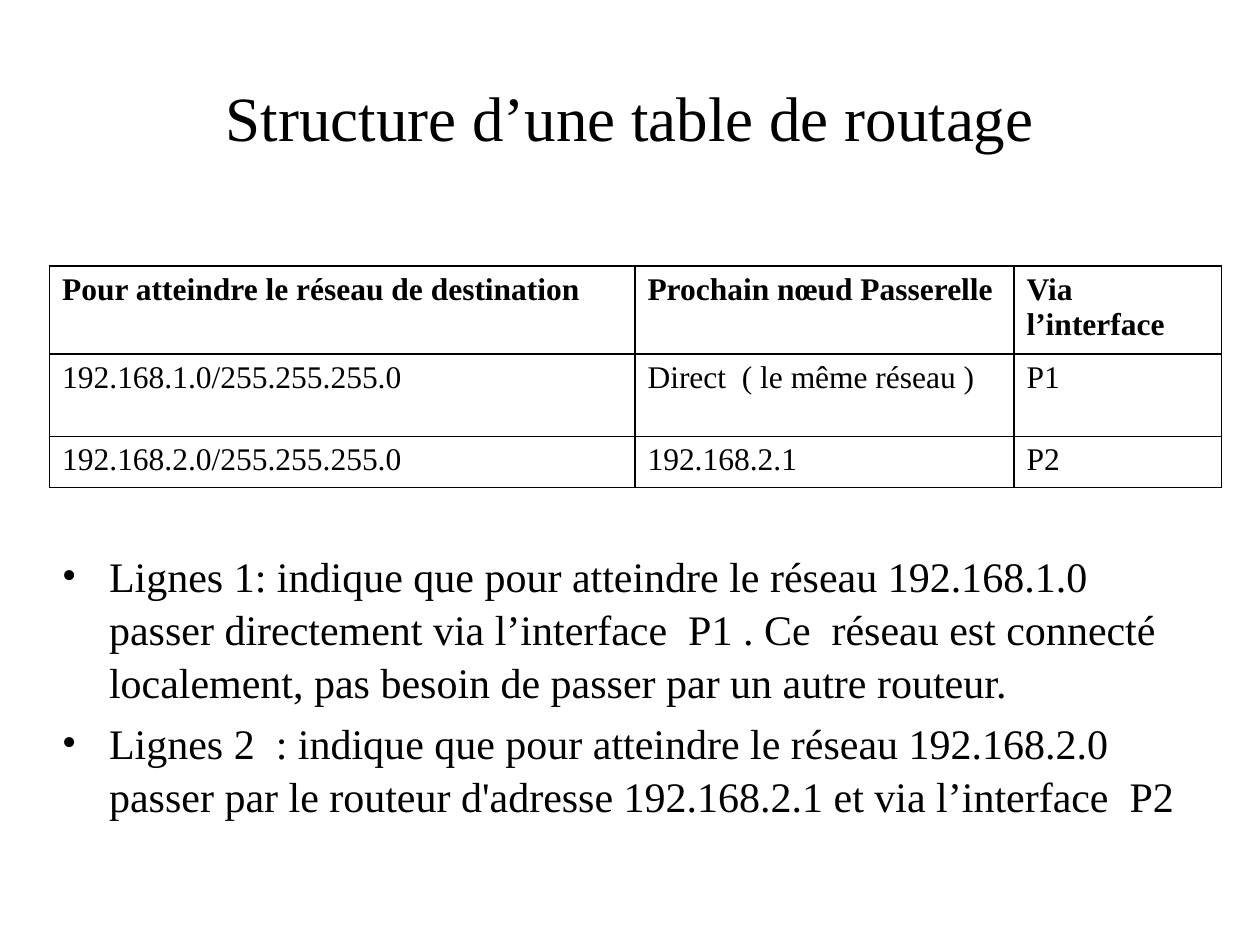
"""Build a slide that explains the structure of a routing table."""
from dataclasses import dataclass

from lxml.etree import SubElement
from pptx import Presentation
from pptx.dml.color import RGBColor
from pptx.enum.text import MSO_ANCHOR as Anchor, PP_ALIGN as Align
from pptx.oxml.ns import qn
from pptx.util import Cm, Pt

TITLE = "Structure d’une table de routage"
ROUTES = [
    ("Pour atteindre le réseau de destination", "Prochain nœud Passerelle", "Via l’interface"),
    ("192.168.1.0/255.255.255.0", "Direct  ( le même réseau )", "P1"),
    ("192.168.2.0/255.255.255.0", "192.168.2.1", "P2"),
]
EXPLANATIONS = [
    "Lignes 1: indique que pour atteindre le réseau 192.168.1.0  passer directement via "
    "l’interface  P1 . Ce  réseau est connecté localement, pas besoin de passer par un autre routeur.",
    "Lignes 2  : indique que pour atteindre le réseau 192.168.2.0 passer par le routeur "
    "d'adresse 192.168.2.1 et via l’interface  P2",
]
COLUMN_WIDTHS = (11.8, 7.64, 4.18)
ROW_HEIGHTS = (1.66, 1.66, 1.03)
LEFT = 1


@dataclass(frozen=True)
class Theme:
    font: str = "Times New Roman"
    ink: str = "000000"
    paper: str = "FFFFFF"
    title_size: int = 36
    body_size: int = 24
    table_size: int = 18
    border: int = 1


THEME = Theme()


def add_text(paragraph, text, size, bold=False):
    run = paragraph.add_run()
    run.text = text
    run.font.name = THEME.font
    run.font.size = Pt(size)
    run.font.bold = bold
    run.font.color.rgb = RGBColor.from_string(THEME.ink)


def add_borders(cell):
    properties = cell._tc.get_or_add_tcPr()
    for position, side in enumerate(("lnL", "lnR", "lnT", "lnB")):
        line = properties.makeelement(qn(f"a:{side}"), {"w": str(Pt(THEME.border))})
        properties.insert(position, line)
        fill = SubElement(line, qn("a:solidFill"))
        SubElement(fill, qn("a:srgbClr"), val=THEME.ink)


def add_title(slide):
    title = slide.shapes.title
    title.left, title.top, title.width, title.height = Cm(1.27), Cm(0.76), Cm(22.86), Cm(3.18)
    title.text_frame.vertical_anchor = Anchor.MIDDLE
    paragraph = title.text_frame.paragraphs[0]
    paragraph.alignment = Align.CENTER
    add_text(paragraph, TITLE, THEME.title_size)


def add_routes(slide):
    frame = slide.shapes.add_table(
        len(ROUTES), len(COLUMN_WIDTHS), Cm(LEFT), Cm(5.36),
        Cm(sum(COLUMN_WIDTHS)), Cm(sum(ROW_HEIGHTS)),
    )
    table = frame.table
    table.horz_banding = False
    for column, width in zip(table.columns, COLUMN_WIDTHS):
        column.width = Cm(width)
    for index, (row, height, texts) in enumerate(zip(table.rows, ROW_HEIGHTS, ROUTES)):
        row.height = Cm(height)
        for cell, text in zip(row.cells, texts):
            cell.fill.solid()
            cell.fill.fore_color.rgb = RGBColor.from_string(THEME.paper)
            add_borders(cell)
            add_text(cell.text_frame.paragraphs[0], text, THEME.table_size, bold=index == 0)


def add_explanations(slide):
    box = slide.shapes.add_textbox(Cm(LEFT), Cm(10.92), Cm(23.01), Cm(6.35))
    frame = box.text_frame
    frame.word_wrap = True
    for index, text in enumerate(EXPLANATIONS):
        paragraph = frame.add_paragraph() if index else frame.paragraphs[0]
        properties = paragraph._p.get_or_add_pPr()
        properties.set("marL", str(Cm(0.95)))
        properties.set("indent", str(-Cm(0.95)))
        SubElement(properties, qn("a:buFont"), typeface=THEME.font)
        SubElement(properties, qn("a:buChar"), char="•")
        paragraph.line_spacing = 1.05
        if index:
            paragraph.space_before = Pt(THEME.body_size * 0.2)
        add_text(paragraph, text, THEME.body_size)


def main():
    presentation = Presentation()
    presentation.slide_width, presentation.slide_height = Cm(25.4), Cm(19.05)
    slide = presentation.slides.add_slide(presentation.slide_layouts[5])
    add_title(slide)
    add_explanations(slide)
    add_routes(slide)
    presentation.save("out.pptx")


if __name__ == "__main__":
    main()
